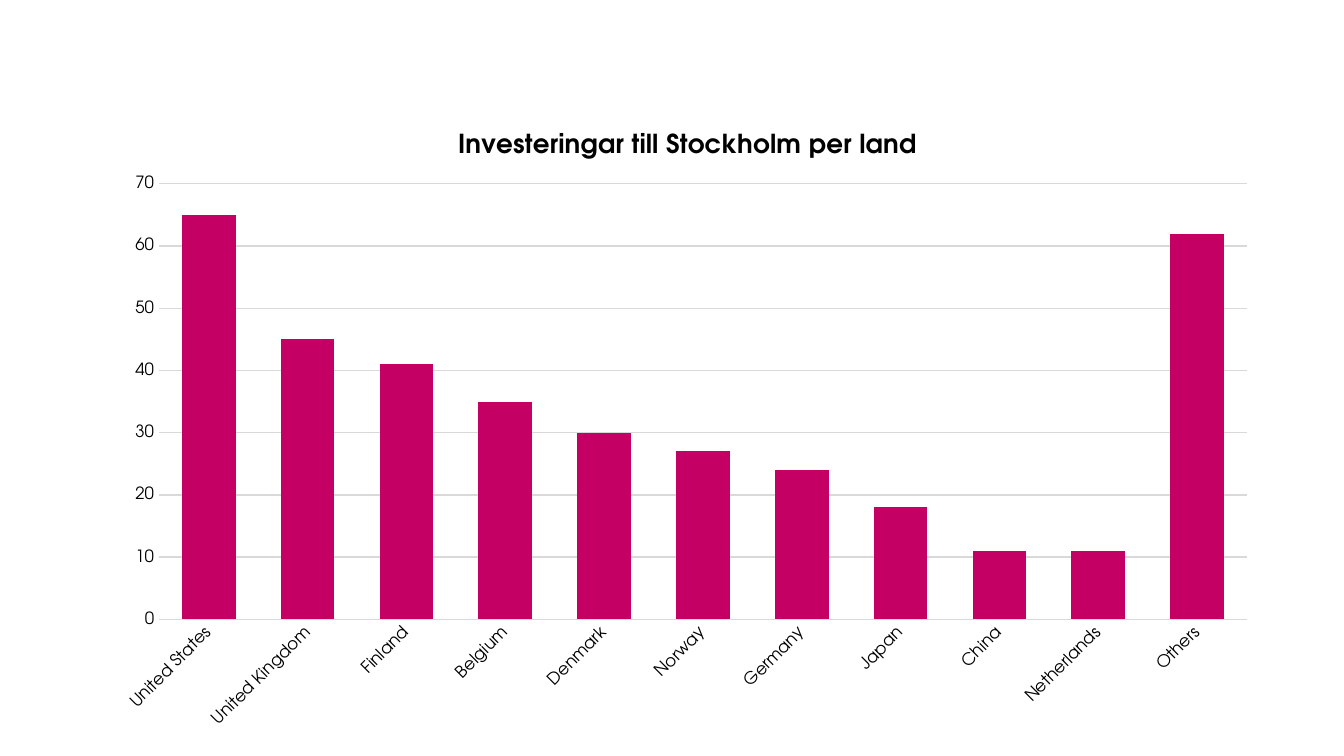
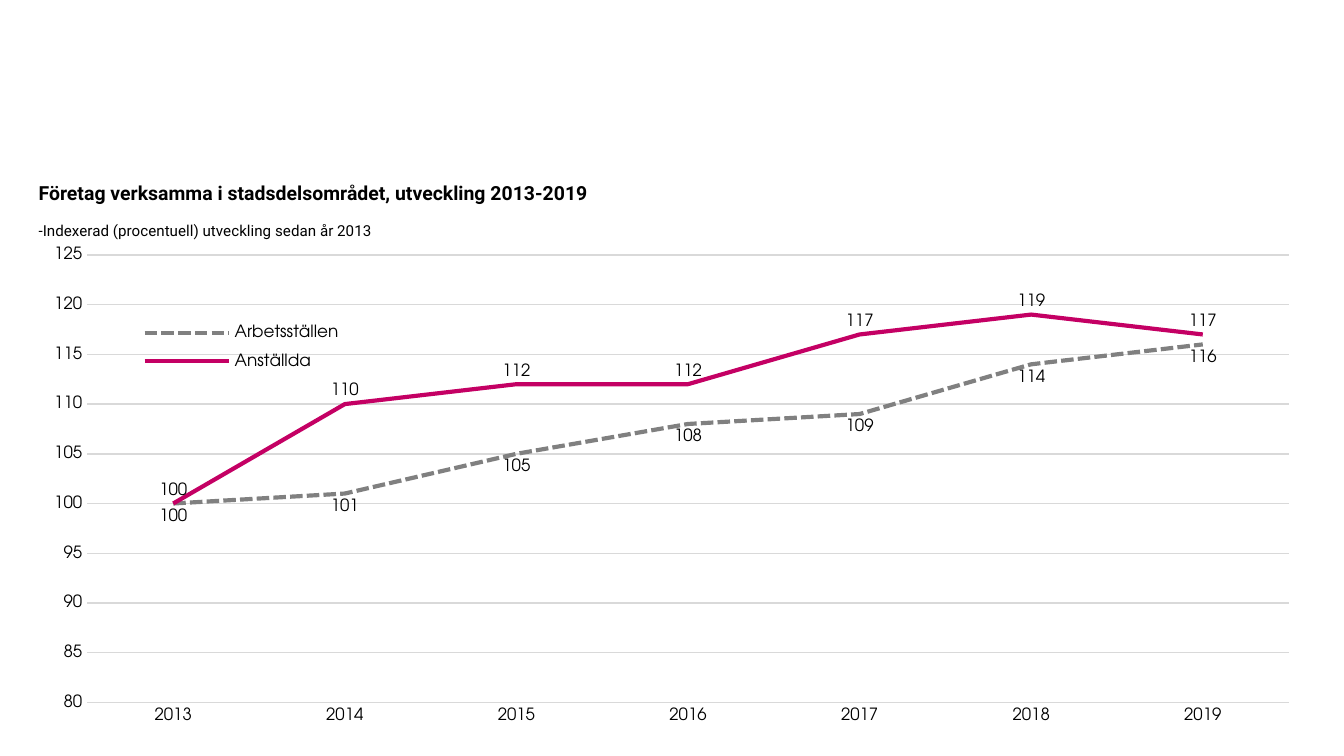
import pptx
import pptx.chart.data
import pptx.dml.color
import pptx.enum.chart
import pptx.enum.dml
import pptx.enum.text
import pptx.oxml
import pptx.oxml.ns
import pptx.util
from pptx.util import Cm

BLACK = pptx.dml.color.RGBColor(0x00, 0x00, 0x00)
WHITE = pptx.dml.color.RGBColor(0xFF, 0xFF, 0xFF)
MAGENTA = pptx.dml.color.RGBColor(0xC4, 0x00, 0x64)
GRAY = pptx.dml.color.RGBColor(0x80, 0x80, 0x80)
GRID = pptx.dml.color.RGBColor(0xD9, 0xD9, 0xD9)
CHART_FONT = "TeX Gyre Adventor"
TEXT_FONT = "Roboto"


def set_layout(parent, follower_tags, left, top, width, height, inner=False):
    """Place a chart part by fractions of the chart, ahead of its first follower."""
    for old in parent.findall(pptx.oxml.ns.qn("c:layout")):
        parent.remove(old)
    target = '<c:layoutTarget val="inner"/>' if inner else ""
    sizes = "".join(
        f'<c:{tag} val="{value}"/>'
        for tag, value in zip("xywh", (left, top, width, height))
    )
    layout = pptx.oxml.parse_xml(
        f'<c:layout {pptx.oxml.ns.nsdecls("c")}><c:manualLayout>{target}'
        f'<c:xMode val="edge"/><c:yMode val="edge"/>{sizes}'
        "</c:manualLayout></c:layout>"
    )
    tags = [pptx.oxml.ns.qn(tag) for tag in follower_tags]
    follower = next((child for child in parent if child.tag in tags), None)
    if follower is None:
        parent.append(layout)
    else:
        follower.addprevious(layout)


class SlideBuilder:
    def __init__(self, deck):
        self.deck = deck
        self.slide = None

    def new_slide(self):
        self.slide = self.deck.slides.add_slide(self.deck.slide_layouts[6])
        fill = self.slide.background.fill
        fill.solid()
        fill.fore_color.rgb = WHITE

    def style_font(self, font, size, name=CHART_FONT, bold=False):
        font.size = pptx.util.Pt(size)
        font.name = name
        font.bold = bold
        font.color.rgb = BLACK

    def heading(self, left, top, width, height, lines):
        """Add lines of (text, size, bold) as raised text in one paragraph."""
        box = self.slide.shapes.add_textbox(Cm(left), Cm(top), Cm(width), Cm(height))
        frame = box.text_frame
        frame.word_wrap = True
        frame.auto_size = pptx.enum.text.MSO_AUTO_SIZE.SHAPE_TO_FIT_TEXT
        para = frame.paragraphs[0]
        for number, (text, size, bold) in enumerate(lines):
            if number:
                para.add_line_break()
            span = para.add_run()
            span.text = text
            self.style_font(span.font, size, TEXT_FONT, bold)
            span._r.get_or_add_rPr().set("baseline", "30000")

    def chart(self, kind, place, plot, categories, series, scale):
        """Add a chart; plot holds fractions, scale is (minimum, maximum, step)."""
        data = pptx.chart.data.CategoryChartData(number_format="0")
        data.categories = categories
        for name, values in series:
            data.add_series(name, values)
        frame = self.slide.shapes.add_chart(kind, *map(Cm, place), data)
        chart = frame.chart
        chart.has_title = False
        chart.has_legend = False
        self.style_font(chart.font, 10)
        chart.plots[0].vary_by_categories = False
        plot_area = chart._chartSpace.chart.plotArea
        set_layout(plot_area, ["c:barChart", "c:lineChart"], *plot, inner=True)

        for axis in (chart.category_axis, chart.value_axis):
            axis.major_tick_mark = pptx.enum.chart.XL_TICK_MARK.NONE
            axis.minor_tick_mark = pptx.enum.chart.XL_TICK_MARK.NONE
            self.style_font(axis.tick_labels.font, 9)
        self.thin_line(chart.category_axis.format.line)
        axis = chart.value_axis
        axis.format.line.fill.background()
        axis.minimum_scale, axis.maximum_scale, axis.major_unit = scale
        axis.tick_labels.number_format = "0"
        axis.tick_labels.number_format_is_linked = False
        axis.has_major_gridlines = True
        self.thin_line(axis.major_gridlines.format.line)
        return chart

    def thin_line(self, line):
        line.color.rgb = GRID
        line.width = pptx.util.Pt(0.75)

    def chart_title(self, chart, text):
        chart.has_title = True
        chart.chart_title.include_in_layout = False
        span = chart.chart_title.text_frame.paragraphs[0].add_run()
        span.text = text
        self.style_font(span.font, 14, bold=True)

    def legend(self, chart, left, top, width, height):
        chart.has_legend = True
        legend = chart.legend
        legend.position = pptx.enum.chart.XL_LEGEND_POSITION.RIGHT
        legend.include_in_layout = True
        self.style_font(legend.font, 9)
        followers = ["c:overlay", "c:spPr", "c:txPr"]
        set_layout(legend._element, followers, left, top, width, height)

    def line_series(self, series, color, label_position, dash=None):
        series.smooth = False
        series.marker.style = pptx.enum.chart.XL_MARKER_STYLE.NONE
        line = series.format.line
        line.color.rgb = color
        line.width = pptx.util.Pt(2.25)
        if dash is not None:
            line.dash_style = dash
        labels = series.data_labels
        labels.show_value = True
        labels.position = label_position
        labels.number_format = "0"
        labels.number_format_is_linked = False
        self.style_font(labels.font, 9)


def investments_slide(builder):
    builder.new_slide()
    countries = {
        "United States": 65, "United Kingdom": 45, "Finland": 41, "Belgium": 35,
        "Denmark": 30, "Norway": 27, "Germany": 24, "Japan": 18, "China": 11,
        "Netherlands": 11, "Others": 62,
    }
    chart = builder.chart(
        pptx.enum.chart.XL_CHART_TYPE.COLUMN_CLUSTERED,
        (2, 2, 22, 12),
        (0.046, 0.123, 0.934, 0.686),
        list(countries),
        [("Series 1", list(countries.values()))],
        (0, 70, 10),
    )
    builder.chart_title(chart, "Investeringar till Stockholm per land")
    columns = chart.plots[0]
    columns.gap_width = 84
    columns.overlap = -27
    fill = columns.series[0].format.fill
    fill.solid()
    fill.fore_color.rgb = MAGENTA
    label_body = chart.category_axis._element.find(pptx.oxml.ns.qn("c:txPr")).bodyPr
    label_body.set("rot", "-2700000")


def companies_slide(builder):
    builder.new_slide()
    builder.heading(0.48, 3.23, 16.33, 1.17, [
        ("Företag verksamma i stadsdelsområdet, utveckling 2013-2019", 18, True),
        ("-Indexerad (procentuell) utveckling sedan år 2013", 14, False),
    ])
    chart = builder.chart(
        pptx.enum.chart.XL_CHART_TYPE.LINE,
        (0.56, 4.5, 24.28, 9.37),
        (0.045, 0.034, 0.935, 0.903),
        [str(year) for year in range(2013, 2020)],
        [
            ("Arbetsställen", [100, 101, 105, 108, 109, 114, 116]),
            ("Anställda", [100, 110, 112, 112, 117, 119, 117]),
        ],
        (80, 125, 5),
    )
    builder.legend(chart, 0.08, 0.15, 0.17, 0.14)
    workplaces, employees = chart.plots[0].series
    position = pptx.enum.chart.XL_LABEL_POSITION
    dash = pptx.enum.dml.MSO_LINE.SQUARE_DOT
    builder.line_series(workplaces, GRAY, position.BELOW, dash)
    builder.line_series(employees, MAGENTA, position.ABOVE)


def main():
    deck = pptx.Presentation()
    deck.slide_width = Cm(25.4)
    deck.slide_height = Cm(14.29)
    builder = SlideBuilder(deck)
    investments_slide(builder)
    companies_slide(builder)
    deck.save("out.pptx")


if __name__ == "__main__":
    main()
